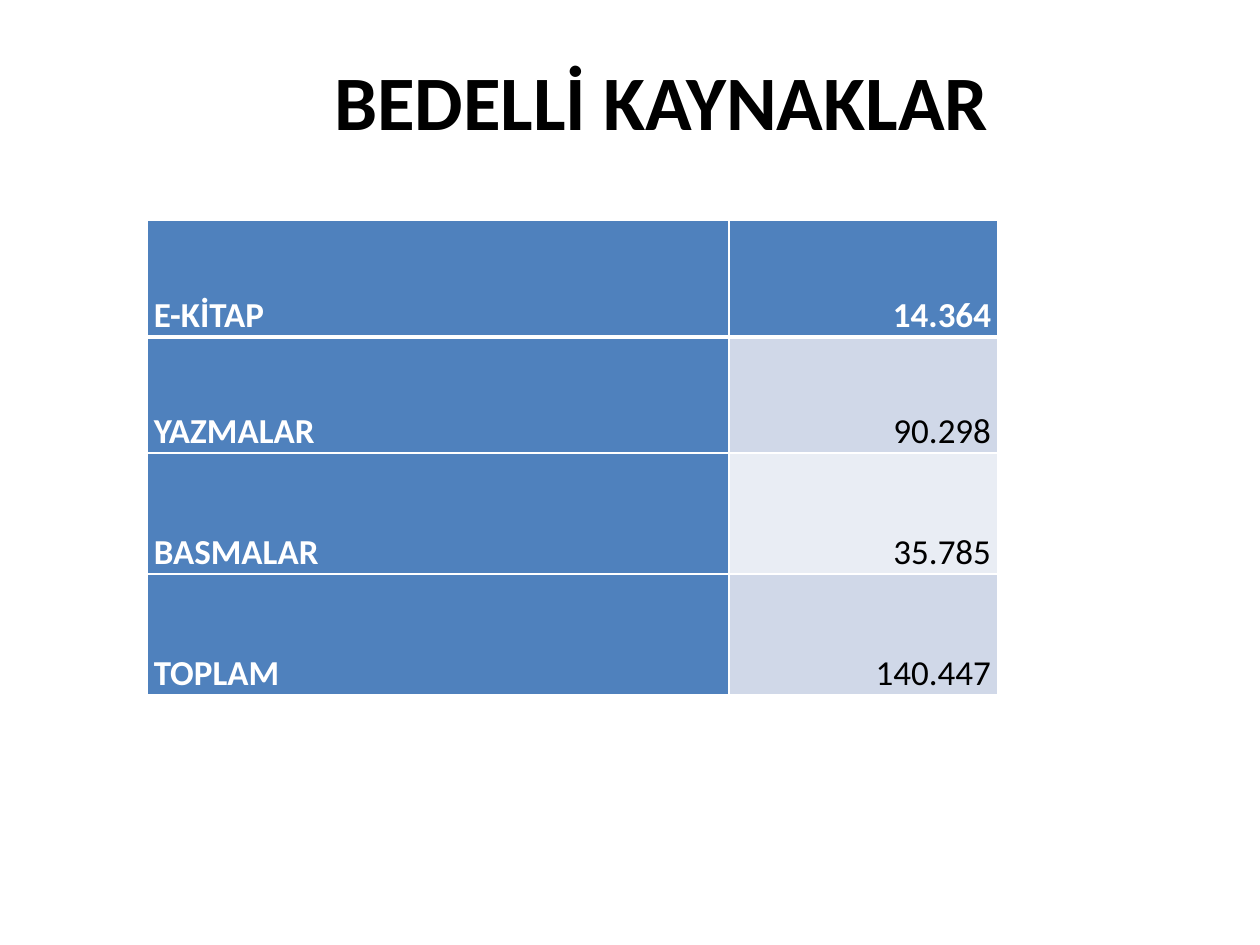
import pptx
import pptx.util
import pptx.dml.color
import pptx.enum.text
import pptx.oxml.ns
import lxml.etree

Cm, Pt = pptx.util.Cm, pptx.util.Pt
ALIGN = pptx.enum.text.PP_ALIGN
ANCHOR = pptx.enum.text.MSO_ANCHOR

# Content
TITLE = "BEDELLİ KAYNAKLAR"
ROWS = [
    ("E-KİTAP", "14.364"),
    ("YAZMALAR", "90.298"),
    ("BASMALAR", "35.785"),
    ("TOPLAM", "140.447"),
]
COLORS = {"header": "4F81BD", "band": "D0D8E8", "plain": "E9EDF4",
          "white": "FFFFFF", "black": "000000"}
FONT = "Calibri"
COLUMN_WIDTHS = [Cm(11.73), Cm(5.41)]
ROW_HEIGHTS = [Cm(2.34), Cm(2.34), Cm(2.44), Cm(2.44)]


def rgb(name):
    return pptx.dml.color.RGBColor.from_string(COLORS[name])


def style_font(font, size, color, bold):
    font.name, font.size, font.bold = FONT, Pt(size), bold
    font.color.rgb = rgb(color)


def add_border(cell, side, width):
    qn = pptx.oxml.ns.qn
    properties = cell._tc.get_or_add_tcPr()
    line = lxml.etree.SubElement(properties, qn(f"a:ln{side}"), w=str(Pt(width)))
    fill = lxml.etree.SubElement(line, qn("a:solidFill"))
    lxml.etree.SubElement(fill, qn("a:srgbClr"), val=COLORS["white"])


def fill_cell(cell, text, row, column):
    is_header = row == 0 or column == 0
    # Borders go before the fill; the rule under the first row is heavier
    for side in "LRTB":
        heavy = (row, side) in ((0, "B"), (1, "T"))
        add_border(cell, side, 3 if heavy else 1)
    cell.fill.solid()
    cell.fill.fore_color.rgb = rgb(
        "header" if is_header else "band" if row % 2 else "plain")
    cell.margin_left = cell.margin_right = Cm(0.13)
    cell.margin_top = cell.margin_bottom = 0
    cell.vertical_anchor = ANCHOR.BOTTOM
    cell.text = text
    para = cell.text_frame.paragraphs[0]
    para.alignment = ALIGN.RIGHT if column else ALIGN.LEFT
    para.line_spacing = 1.15
    style_font(para.font, 20, "white" if is_header else "black", is_header)


deck = pptx.Presentation()
deck.slide_width, deck.slide_height = Cm(25.4), Cm(19.05)
page = deck.slides.add_slide(deck.slide_layouts[5])

# Title, raised in its box by a deep bottom margin
title = page.shapes.title
title.left, title.top, title.width, title.height = Cm(3.18), Cm(0.64), Cm(20.32), Cm(4.65)
frame = title.text_frame
frame.text = TITLE
frame.vertical_anchor = ANCHOR.MIDDLE
frame.margin_bottom = Cm(2.02)
frame.paragraphs[0].alignment = ALIGN.CENTER
style_font(frame.paragraphs[0].font, 44, "black", True)

# Table of resources
table = page.shapes.add_table(
    len(ROWS), len(COLUMN_WIDTHS), Cm(2.97), Cm(4.45),
    sum(COLUMN_WIDTHS), sum(ROW_HEIGHTS)).table
table.first_col = True
for column, width in zip(table.columns, COLUMN_WIDTHS):
    column.width = width
for row, height in zip(table.rows, ROW_HEIGHTS):
    row.height = height
for row, texts in enumerate(ROWS):
    for column, text in enumerate(texts):
        fill_cell(table.cell(row, column), text, row, column)

deck.save("out.pptx")
